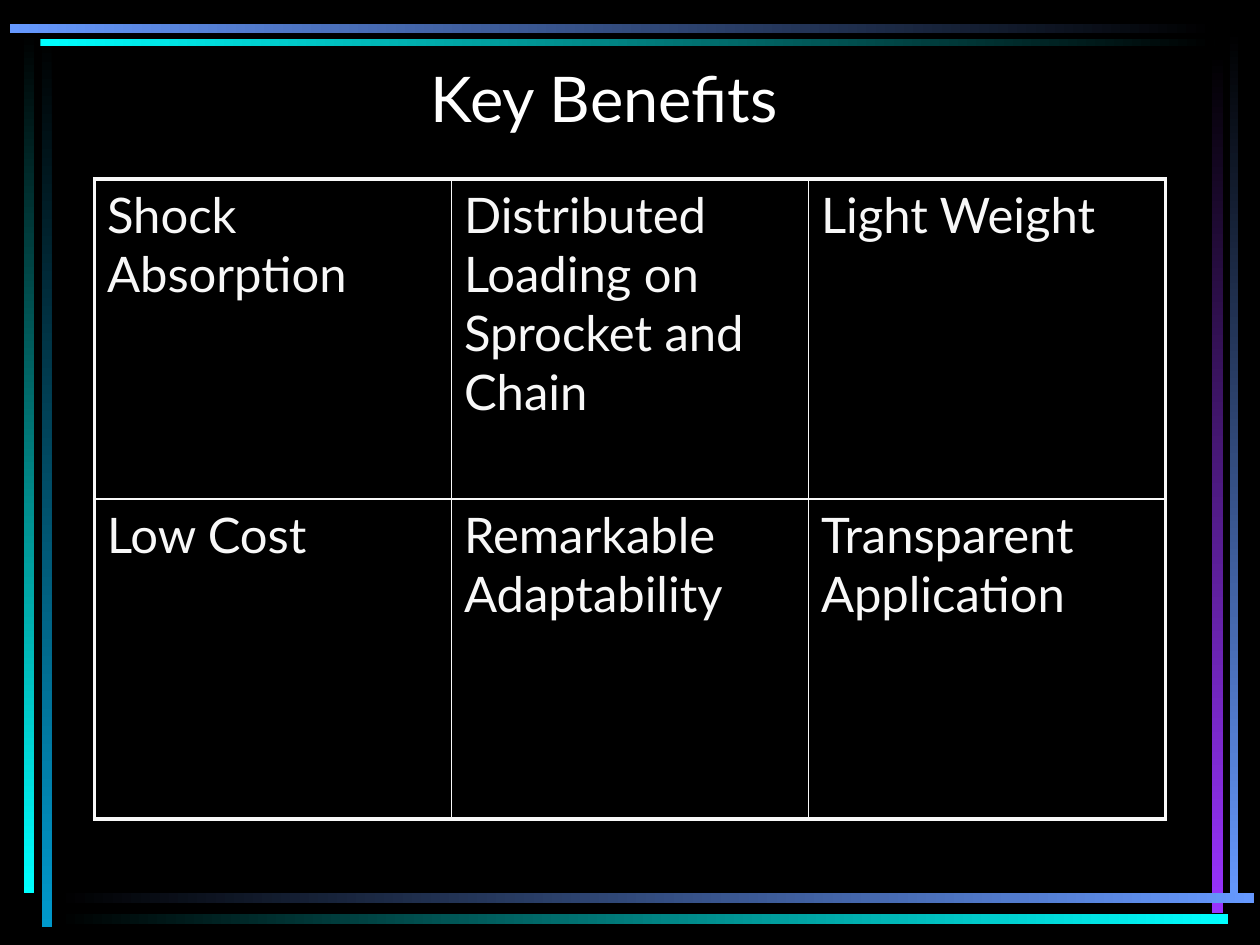
from pptx import Presentation
from pptx.dml.color import RGBColor
from pptx.enum.shapes import MSO_SHAPE as Shape
from pptx.enum.text import MSO_ANCHOR as Anchor, PP_ALIGN as Align
from pptx.oxml import parse_xml
from pptx.oxml.ns import nsdecls
from pptx.util import Inches, Pt

BLACK = RGBColor(0x00, 0x00, 0x00)
WHITE = RGBColor(0xFF, 0xFF, 0xFF)
OFF_WHITE = RGBColor(0xF8, 0xF8, 0xF8)
TEAL_BLUE = RGBColor(0x00, 0x99, 0xCC)
CYAN = RGBColor(0x00, 0xFF, 0xFF)
PERIWINKLE = RGBColor(0x66, 0x99, 0xFF)
PURPLE = RGBColor(0x99, 0x33, 0xFF)


def write(frame, text, size, color, align=Align.LEFT):
    frame.word_wrap = True
    paragraph = frame.paragraphs[0]
    paragraph.alignment = align
    run = paragraph.add_run()
    run.text = text
    run.font.name = "Lato"
    run.font.size = Pt(size)
    run.font.color.rgb = color


def set_border(cell, side, points):
    cell._tc.get_or_add_tcPr().append(parse_xml(
        f'<a:{side} {nsdecls("a")} w="{Pt(points)}"><a:solidFill>'
        f'<a:srgbClr val="{OFF_WHITE}"/></a:solidFill></a:{side}>'))


prs = Presentation()
prs.slide_width, prs.slide_height = Inches(10), Inches(7.5)
slide = prs.slides.add_slide(prs.slide_layouts[6])
slide.background.fill.solid()
slide.background.fill.fore_color.rgb = BLACK

# Frame of fading bars: left, top, width, height, start colour, end colour, angle
DOWN, RIGHT = 270, 0
frame_bars = [
    (0.33, 0.28, 0.08, 7.08, BLACK, TEAL_BLUE, DOWN),
    (0.19, 0.25, 0.08, 6.84, BLACK, CYAN, DOWN),
    (9.76, 0.24, 0.07, 6.93, BLACK, PERIWINKLE, DOWN),
    (9.62, 0.42, 0.09, 6.83, BLACK, PURPLE, DOWN),
    (0.45, 7.09, 9.5, 0.08, BLACK, PERIWINKLE, RIGHT),
    (0.45, 7.25, 9.3, 0.08, BLACK, CYAN, RIGHT),
    (0.32, 0.31, 9.32, 0.06, CYAN, BLACK, RIGHT),
    (0.08, 0.19, 9.56, 0.07, PERIWINKLE, BLACK, RIGHT),
]
for left, top, width, height, start, end, angle in frame_bars:
    bar = slide.shapes.add_shape(Shape.RECTANGLE, Inches(left), Inches(top),
                                 Inches(width), Inches(height))
    bar.shadow.inherit = False
    bar.line.fill.background()
    bar.fill.gradient()
    bar.fill.gradient_angle = angle
    for stop, position, color in zip(bar.fill.gradient_stops, (0, 1), (start, end)):
        stop.position = position
        stop.color.rgb = color

# Title
title = slide.shapes.add_textbox(Inches(0.42), Inches(0.42), Inches(8.75), Inches(0.92))
title.text_frame.vertical_anchor = Anchor.TOP
write(title.text_frame, "Key Benefits", 36, WHITE, align=Align.CENTER)

# Benefits table: heavy outer border, thin inner lines
benefits = [
    ["Shock Absorption", "Distributed Loading on Sprocket and Chain", "Light Weight"],
    ["Low Cost", "Remarkable Adaptability", "Transparent Application"],
]
OUTER, INNER = 2.25, 1
rows, cols = len(benefits), len(benefits[0])
grid = slide.shapes.add_table(rows, cols, Inches(0.75), Inches(1.42),
                              Inches(8.5), Inches(5.08)).table
grid.first_row = grid.horz_banding = False
for r, row in enumerate(benefits):
    for c, benefit in enumerate(row):
        cell = grid.cell(r, c)
        write(cell.text_frame, benefit, 28, OFF_WHITE)
        for side, on_edge in (("lnL", c == 0), ("lnR", c == cols - 1),
                              ("lnT", r == 0), ("lnB", r == rows - 1)):
            set_border(cell, side, OUTER if on_edge else INNER)
        cell.fill.background()

prs.save("out.pptx")
